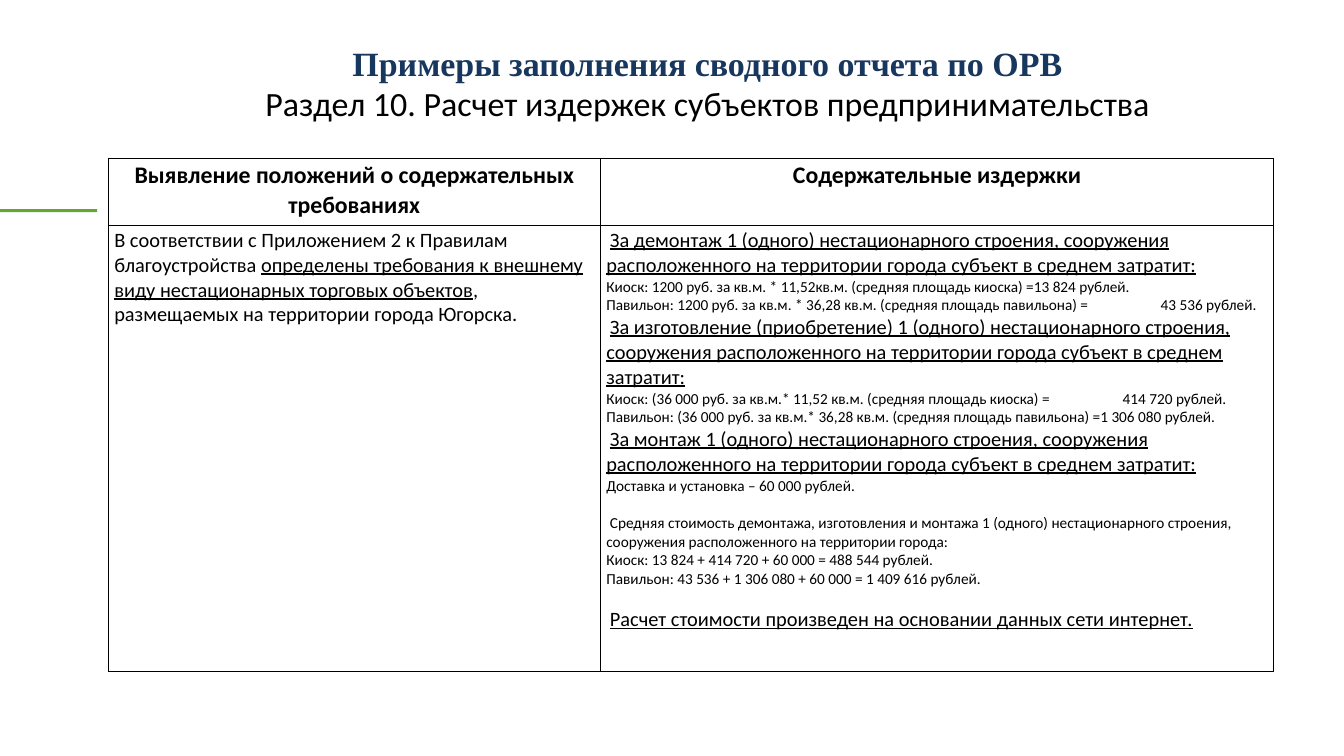
import pptx
import pptx.util
import pptx.dml.color
import pptx.enum.shapes
import pptx.enum.text
import pptx.oxml.ns
import lxml.etree

rgb = pptx.dml.color.RGBColor.from_string
qn = pptx.oxml.ns.qn
center = pptx.enum.text.PP_ALIGN.CENTER


def px(count):
    return pptx.util.Emu(count * 9144)


def add_run(paragraph, text, size, bold=False, underline=False, face="Calibri", color="000000"):
    run = paragraph.add_run()
    run.text = text
    run.font.size = pptx.util.Pt(size)
    run.font.bold = bold
    run.font.underline = underline
    run.font.name = face
    run.font.color.rgb = rgb(color)


deck = pptx.Presentation()
deck.slide_width = px(2199)
deck.slide_height = px(1237)
slide = deck.slides.add_slide(deck.slide_layouts[6])

accent = slide.shapes.add_shape(
    pptx.enum.shapes.MSO_SHAPE.RECTANGLE, px(0), px(342), px(159), px(5))
accent.shadow.inherit = False
accent.fill.solid()
accent.fill.fore_color.rgb = rgb("66A82F")
accent.line.fill.background()

heading = slide.shapes.add_textbox(px(388), px(64), px(1539), px(145)).text_frame
heading.word_wrap = True
title = heading.paragraphs[0]
title.alignment = center
add_run(title, "Примеры заполнения сводного отчета по ОРВ", 40,
        bold=True, face="Times New Roman", color="17375E")
section = heading.add_paragraph()
section.alignment = center
add_run(section, "Раздел 10. Расчет издержек субъектов предпринимательства", 40)

costs_table = slide.shapes.add_table(2, 2, px(177), px(259), px(1907), px(839)).table
costs_table.first_row = False
costs_table.horz_banding = False
for column, width in zip(costs_table.columns, (805, 1102)):
    column.width = px(width)
for row, height in zip(costs_table.rows, (109, 730)):
    row.height = px(height)

for cell in costs_table.iter_cells():
    cell.fill.background()
    properties = cell._tc.get_or_add_tcPr()
    for position, side in enumerate(("lnL", "lnR", "lnT", "lnB")):
        border = lxml.etree.Element(qn(f"a:{side}"), w=str(pptx.util.Pt(1)))
        ink = lxml.etree.SubElement(border, qn("a:solidFill"))
        lxml.etree.SubElement(ink, qn("a:srgbClr"), val="000000")
        properties.insert(position, border)

column_titles = ("Выявление положений о содержательных требованиях", "Содержательные издержки")
for column_index, column_title in enumerate(column_titles):
    paragraph = costs_table.cell(0, column_index).text_frame.paragraphs[0]
    paragraph.alignment = center
    add_run(paragraph, column_title, 28, bold=True)

requirement = costs_table.cell(1, 0).text_frame.paragraphs[0]
for text, underline in (
    ("В соответствии с Приложением 2 к Правилам благоустройства ", False),
    ("определены требования к внешнему виду нестационарных торговых объектов", True),
    (", размещаемых на территории города Югорска.", False),
):
    add_run(requirement, text, 24, underline=underline)

subject = "сооружения расположенного на территории города"
spending = f"{subject} субъект в среднем затратит:"
cost_lines = (
    ("lead", 0, 0, f"За демонтаж 1 (одного) нестационарного строения, {spending}"),
    ("detail", 0, 0, "Киоск: 1200 руб. за кв.м. * 11,52кв.м. (средняя площадь киоска) =13 824 рублей."),
    ("detail", 0, 907, "Павильон: 1200 руб. за кв.м. * 36,28 кв.м. (средняя площадь павильона) =\t43 536 рублей."),
    ("lead", 0, 0, f"За изготовление (приобретение) 1 (одного) нестационарного строения, {spending}"),
    ("detail", 0, 845, "Киоск: (36 000 руб. за кв.м.* 11,52 кв.м. (средняя площадь киоска) =\t414 720 рублей."),
    ("detail", 0, 0, "Павильон: (36 000 руб. за кв.м.* 36,28 кв.м. (средняя площадь павильона) =1 306 080 рублей."),
    ("lead", 0, 0, f"За монтаж 1 (одного) нестационарного строения, {spending}"),
    ("detail", 0, 0, "Доставка и установка – 60 000 рублей."),
    ("average", 22, 0, f"Средняя стоимость демонтажа, изготовления и монтажа 1 (одного) нестационарного строения, {subject}:"),
    ("detail", 0, 0, "Киоск: 13 824 + 414 720 + 60 000 = 488 544 рублей."),
    ("detail", 0, 0, "Павильон: 43 536 + 1 306 080 + 60 000 = 1 409 616 рублей."),
    ("lead", 22, 0, "Расчет стоимости произведен на основании данных сети интернет."),
)
costs = costs_table.cell(1, 1).text_frame
for line_index, (role, gap, tab_stop, text) in enumerate(cost_lines):
    paragraph = costs.add_paragraph() if line_index else costs.paragraphs[0]
    paragraph.space_before = pptx.util.Pt(gap)
    paragraph_properties = paragraph._p.get_or_add_pPr()
    if role != "detail":
        paragraph_properties.set("indent", str(px(6)))
    if tab_stop:
        tabs = lxml.etree.SubElement(paragraph_properties, qn("a:tabLst"))
        lxml.etree.SubElement(tabs, qn("a:tab"), pos=str(px(tab_stop)), algn="l")
    is_lead = role == "lead"
    add_run(paragraph, text, 24 if is_lead else 18, underline=is_lead)

deck.save("out.pptx")
